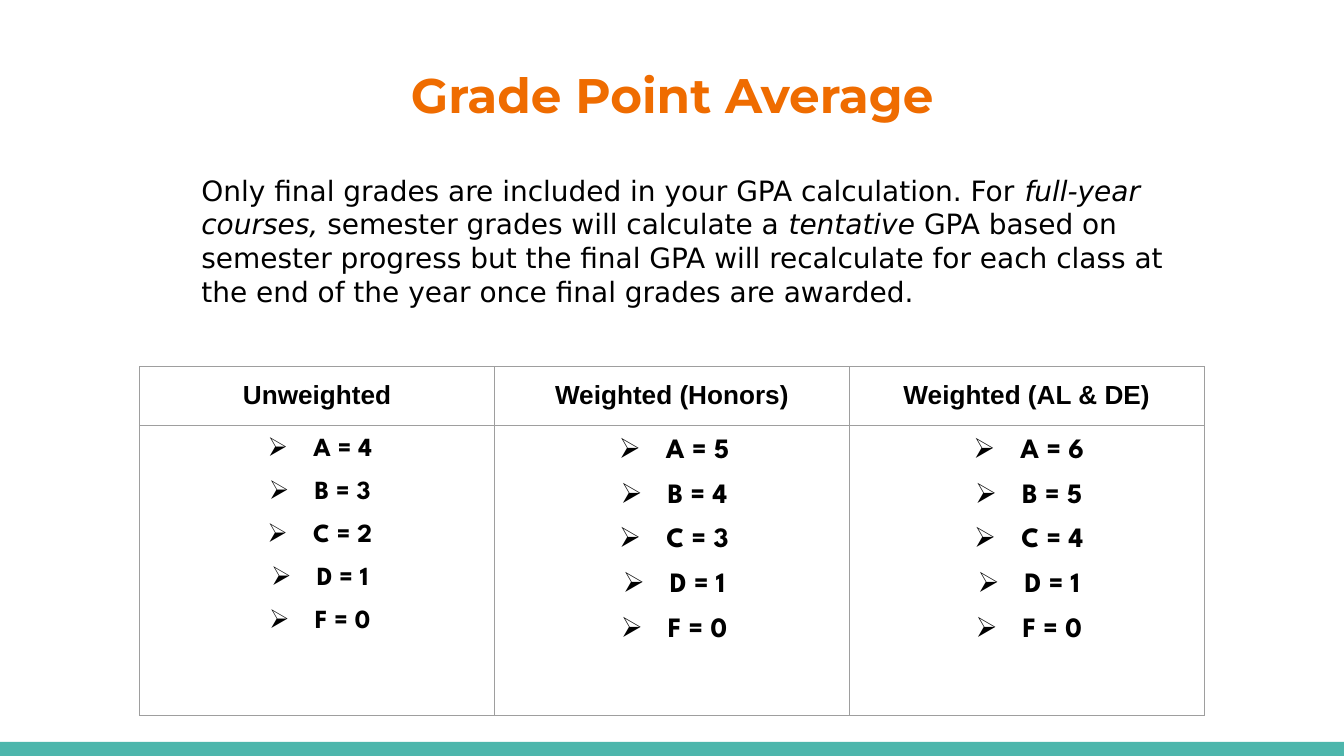
"""Build a slide explaining how the grade point average is calculated."""
import lxml.etree
import pptx
import pptx.dml.color
import pptx.enum.shapes
import pptx.enum.text
import pptx.oxml.ns
import pptx.util

COLORS = {"title": "EF6C00", "bar": "4DB6AC", "text": "000000", "border": "9E9E9E"}
GRID_COLS, GRID_ROWS = 100, 56.25
CENTER = pptx.enum.text.PP_ALIGN.CENTER
BODY = [
    ("Only final grades are included in your GPA calculation. For ", False),
    ("full-year courses,", True),
    (" semester grades will calculate a ", False),
    ("tentative", True),
    (" GPA based on semester progress but the final GPA will recalculate for each "
     "class at the end of the year once final grades are awarded.", False),
]
SCALES = [
    ("Unweighted", [4, 3, 2, 1, 0], 14, -0.34),
    ("Weighted (Honors)", [5, 4, 3, 1, 0], 15, -0.35),
    ("Weighted (AL & DE)", [6, 5, 4, 1, 0], 15, -0.35),
]


def rgb(name):
    """Return a palette colour."""
    return pptx.dml.color.RGBColor.from_string(COLORS[name])


def child(parent, tag, **attrs):
    """Append a DrawingML element."""
    return lxml.etree.SubElement(parent, pptx.oxml.ns.qn(f"a:{tag}"), attrs)


class Deck:
    """Hold the style and the current slide."""

    def __init__(self):
        """Start a one-slide presentation."""
        self.prs = pptx.Presentation()
        self.prs.slide_width = pptx.util.Inches(10)
        self.prs.slide_height = pptx.util.Inches(5.625)
        self.s = self.prs.slides.add_slide(self.prs.slide_layouts[6])

    def box(self, x, y, w, h):
        """Convert grid columns and rows to lengths."""
        cw = self.prs.slide_width / GRID_COLS
        rh = self.prs.slide_height / GRID_ROWS
        return [pptx.util.Emu(round(v)) for v in (x * cw, y * rh, w * cw, h * rh)]

    def style(self, p, font, size, color="text", bold=False):
        """Format every run of a paragraph."""
        for r in p.runs:
            r.font.name = font
            r.font.size = pptx.util.Pt(size)
            r.font.bold = bold
            r.font.color.rgb = rgb(color)

    def inset(self, target):
        """Set equal inner margins on a text frame or cell."""
        for side in ("left", "top", "right", "bottom"):
            setattr(target, f"margin_{side}", pptx.util.Inches(0.1))

    def bar(self, *at):
        """Draw a plain coloured bar."""
        sp = self.s.shapes.add_shape(pptx.enum.shapes.MSO_SHAPE.RECTANGLE, *self.box(*at))
        sp.shadow.inherit = False
        sp.fill.solid()
        sp.fill.fore_color.rgb = rgb("bar")
        sp.line.fill.background()

    def text(self, at, parts, font, size, color="text", bold=False, align=None, indent=0):
        """Add a paragraph of upright and italic parts."""
        tf = self.s.shapes.add_textbox(*self.box(*at)).text_frame
        tf.word_wrap = True
        self.inset(tf)
        p = tf.paragraphs[0]
        p.alignment = align
        if indent:
            p._p.get_or_add_pPr().set("marL", str(pptx.util.Inches(indent)))
        for words, italic in parts:
            r = p.add_run()
            r.text = words
            r.font.italic = italic
        self.style(p, font, size, color, bold)

    def cell(self, cell, lines, font, size, hanging=None):
        """Fill a bordered cell with centred lines, bulleted if hanging."""
        self.inset(cell)
        tf = cell.text_frame
        tf.text = "\n".join(lines)
        for i, p in enumerate(tf.paragraphs):
            if hanging:
                pPr = p._p.get_or_add_pPr()
                pPr.set("marL", str(pptx.util.Inches(0.38)))
                pPr.set("indent", str(pptx.util.Inches(hanging)))
                child(child(pPr, "buClr"), "srgbClr", val=COLORS["text"])
                child(pPr, "buChar", char="➢")
            p.alignment = CENTER
            if i:
                p.space_before = pptx.util.Pt(10)
            self.style(p, font, size, bold=True)
        tcPr = cell._tc.get_or_add_tcPr()
        for edge in "LRTB":
            ln = child(tcPr, f"ln{edge}", w=str(pptx.util.Pt(0.75)))
            child(child(ln, "solidFill"), "srgbClr", val=COLORS["border"])
        cell.fill.background()

    def table(self, at, header_rows, scales):
        """Add a table with one grading scale per column."""
        x, y, w, h = self.box(*at)
        t = self.s.shapes.add_table(2, len(scales), x, y, w, h).table
        t.first_row = t.horz_banding = False
        t.rows[0].height = self.box(0, 0, 0, header_rows)[3]
        t.rows[1].height = h - t.rows[0].height
        for i, (name, points, size, hanging) in enumerate(scales):
            grades = [f"{letter} = {n}" for letter, n in zip("ABCDF", points)]
            self.cell(t.cell(0, i), [name], "Arial", 14)
            self.cell(t.cell(1, i), grades, "League Spartan", size, hanging)


def main():
    """Compose and save the slide."""
    d = Deck()
    d.bar(0, 55.2, 100, 1.05)
    d.text((9, 3.8, 82.1, 11.1), [("Grade Point Average", False)],
           "Montserrat", 26, "title", True, CENTER)
    d.text((9, 11.9, 82.1, 38.1), BODY, "DejaVu Sans", 15, indent=0.5)
    d.table((10.4, 27.3, 79.2, 25.7), 4.1, SCALES)
    d.prs.save("out.pptx")


if __name__ == "__main__":
    main()
